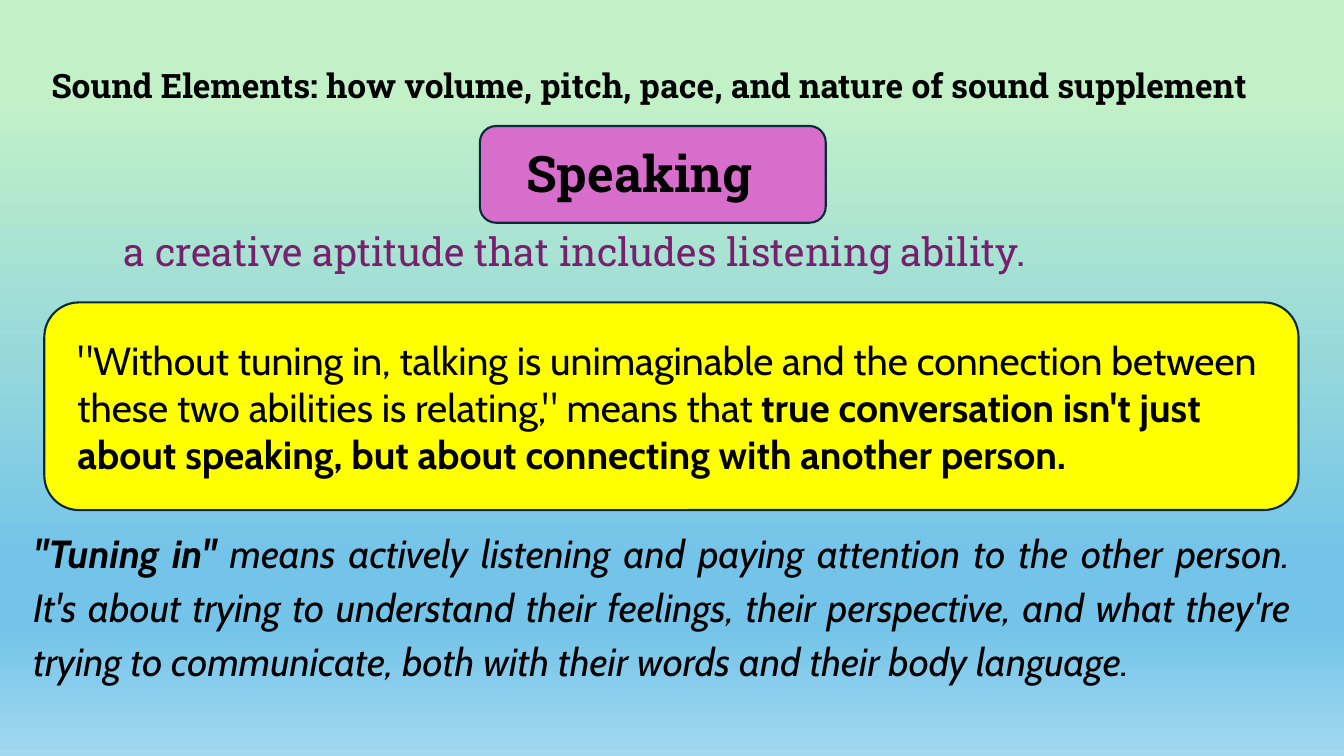
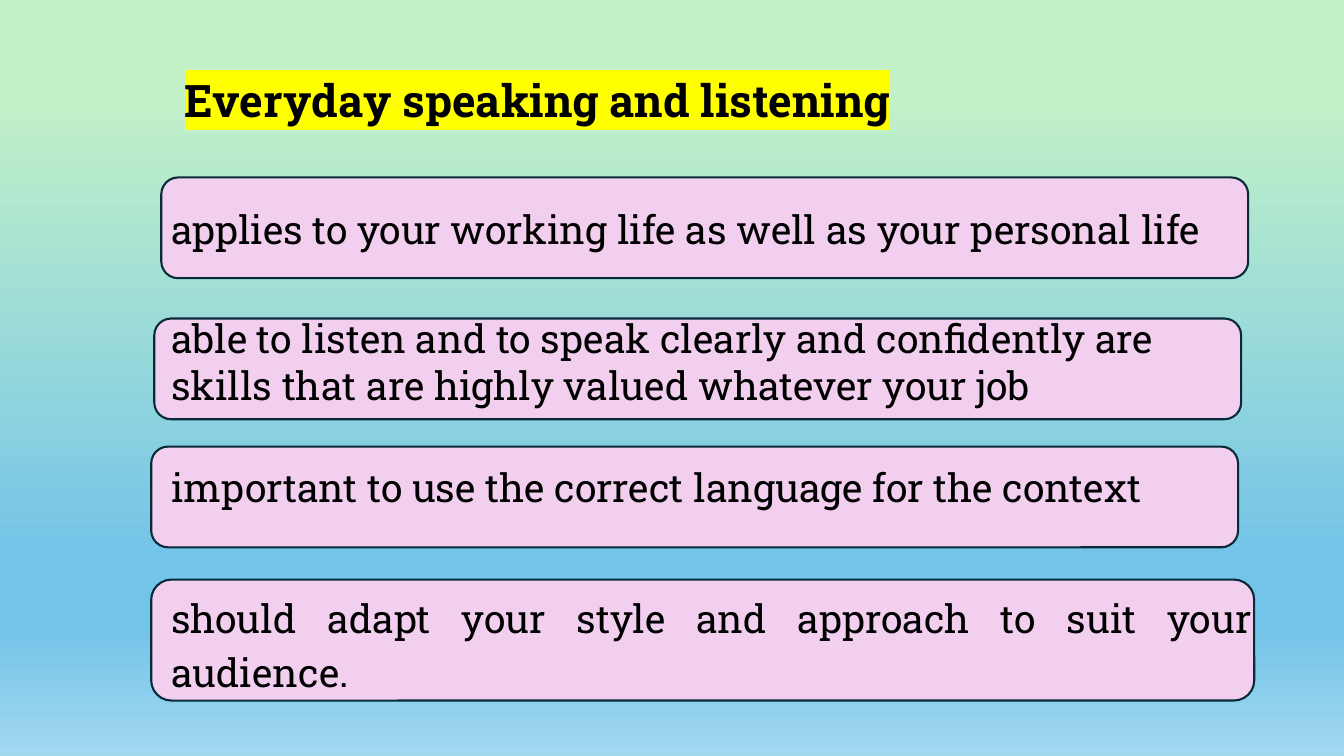
"""Build two slides about speaking and listening."""
from copy import deepcopy

from lxml import etree
from pptx import Presentation
from pptx.dml.color import RGBColor
from pptx.enum.shapes import MSO_SHAPE
from pptx.enum.text import MSO_ANCHOR, MSO_AUTO_SIZE, PP_ALIGN
from pptx.oxml.ns import qn
from pptx.util import Inches, Pt

ROUNDED = MSO_SHAPE.ROUNDED_RECTANGLE
TOP = MSO_ANCHOR.TOP
NO_FIT = MSO_AUTO_SIZE.NONE
LEFT, JUSTIFY = PP_ALIGN.LEFT, PP_ALIGN.JUSTIFY

WIDTH, HEIGHT = Inches(13.33), Inches(7.5)
TITLE_ONLY = 5
SLAB, CABIN = "Roboto Slab", "Cabin"

BLACK = RGBColor(0x00, 0x00, 0x00)
PLUM = RGBColor(0x78, 0x20, 0x6E)
ORCHID = RGBColor(0xD8, 0x6E, 0xCC)
PINK = RGBColor(0xF2, 0xCF, 0xEE)
YELLOW = RGBColor(0xFF, 0xFF, 0x00)
NAVY = RGBColor(0x09, 0x2A, 0x39)
MINT = RGBColor(0xC2, 0xF1, 0xC8)
SKY = RGBColor(0x74, 0xC4, 0xE9)
PALE_SKY = RGBColor(0xA2, 0xD8, 0xF0)
BACKGROUND = [(0.13, MINT), (0.74, SKY), (0.83, SKY), (1, PALE_SKY)]

CARDS = [
    ((12, 23.47, 80.87, 13.33), (12, 26.53, 81.85, 7.6), LEFT,
     "applies to your working life as well as your personal life"),
    ((11.48, 42.13, 80.87, 13.33), (12, 40.93, 80.87, 13.87), LEFT,
     "able to listen and to speak clearly and confidently are skills "
     "that are highly valued whatever your job"),
    ((11.25, 59.07, 80.87, 13.33), (12, 60.67, 80.87, 7.6), LEFT,
     "important to use the correct language for the context"),
    ((11.25, 76.67, 82.07, 16), (12, 77.07, 81.85, 15.47), JUSTIFY,
     "should adapt your style and approach to suit your audience."),
]


def share(box):
    """Turn left, top, width and height in percent of the slide into lengths."""
    sides = (WIDTH, HEIGHT, WIDTH, HEIGHT)
    return [int(side * part / 100) for side, part in zip(sides, box)]


def set_background(master):
    """Give the master the vertical gradient that every slide inherits."""
    fill = master.background.fill
    fill.gradient()
    fill.gradient_angle = 270
    stops = master.element.find(".//" + qn("p:bg")).find(".//" + qn("a:gsLst"))
    while len(stops) < len(BACKGROUND):
        stops.append(deepcopy(stops[0]))
    for stop, (position, color) in zip(fill.gradient_stops, BACKGROUND):
        stop.position = position
        stop.color.rgb = color


def write(sp, *runs, size=28, font=SLAB, color=BLACK, bold=False, italic=False,
          align=LEFT):
    """Fill a shape with one paragraph of runs, each a text or a (text, bold) pair."""
    tf = sp.text_frame
    tf.word_wrap = True
    tf.auto_size = NO_FIT
    tf.vertical_anchor = TOP
    p = tf.paragraphs[0]
    p.alignment = align
    if align == JUSTIFY:
        p.line_spacing = 1.15
    for run in runs:
        text, heavy = (run, bold) if isinstance(run, str) else run
        r = p.add_run()
        r.text = text
        r.font.size = Pt(size)
        r.font.bold = heavy
        r.font.italic = italic
        r.font.color.rgb = color
        r.font.name = font


def add_text(s, box, *runs, **style):
    """Add a text box."""
    write(s.shapes.add_textbox(*share(box)), *runs, **style)


def add_panel(s, box, color):
    """Add an outlined rounded rectangle."""
    sp = s.shapes.add_shape(ROUNDED, *share(box))
    sp.shadow.inherit = False
    sp.fill.solid()
    sp.fill.fore_color.rgb = color
    sp.line.color.rgb = NAVY
    sp.line.width = Pt(1.5)


def set_title(s, box, text, **style):
    """Place the title placeholder in front of the shapes drawn so far."""
    title = s.shapes.title
    title.left, title.top, title.width, title.height = share(box)
    write(title, text, bold=True, **style)
    s.shapes.element.append(title.element)
    return title


def highlight(sp, color):
    """Mark all text of a shape with a highlight colour."""
    for latin in sp.element.iter(qn("a:latin")):
        mark = etree.Element(qn("a:highlight"))
        etree.SubElement(mark, qn("a:srgbClr"), val=str(color))
        latin.addprevious(mark)


def build_speaking(s):
    """Build the slide that defines speaking."""
    add_text(s, (1.73, 68.4, 94.97, 29.87), ("\"Tuning in\"", True),
             " means actively listening and paying attention to the other person. "
             "It's about trying to understand their feelings, their perspective, "
             "and what they're trying to communicate, both with their words and "
             "their body language.",
             font=CABIN, italic=True, align=JUSTIFY)
    add_text(s, (3.08, 7.07, 90.47, 13.33),
             "Sound Elements: how volume, pitch, pace, and nature of sound supplement",
             size=24, bold=True, align=JUSTIFY)
    add_text(s, (8.48, 29.47, 83.27, 7.6),
             "a creative aptitude that includes listening ability.", color=PLUM)
    add_panel(s, (3.3, 40, 93.32, 27.47), YELLOW)
    add_text(s, (5.03, 43.87, 91.67, 20.13),
             "\"Without tuning in, talking is unimaginable and the connection "
             "between these two abilities is relating,\" means that ",
             ("true conversation isn't just about speaking, but about connecting "
              "with another person.", True), font=CABIN)
    add_panel(s, (35.71, 16.67, 25.73, 12.8), ORCHID)
    set_title(s, (38.41, 18.13, 21.98, 9.47), "Speaking", size=36)


def build_everyday(s):
    """Build the slide of everyday speaking and listening."""
    title = set_title(s, (12.98, 7.87, 65.04, 9.2),
                      "Everyday speaking and listening", size=32, align=JUSTIFY)
    highlight(title, YELLOW)
    for panel_box, text_box, align, text in CARDS:
        add_panel(s, panel_box, PINK)
        add_text(s, text_box, text, align=align)


def main():
    """Build and save the presentation."""
    prs = Presentation()
    prs.slide_width, prs.slide_height = WIDTH, HEIGHT
    set_background(prs.slide_master)
    for build in (build_speaking, build_everyday):
        build(prs.slides.add_slide(prs.slide_layouts[TITLE_ONLY]))
    prs.save("out.pptx")


if __name__ == "__main__":
    main()
